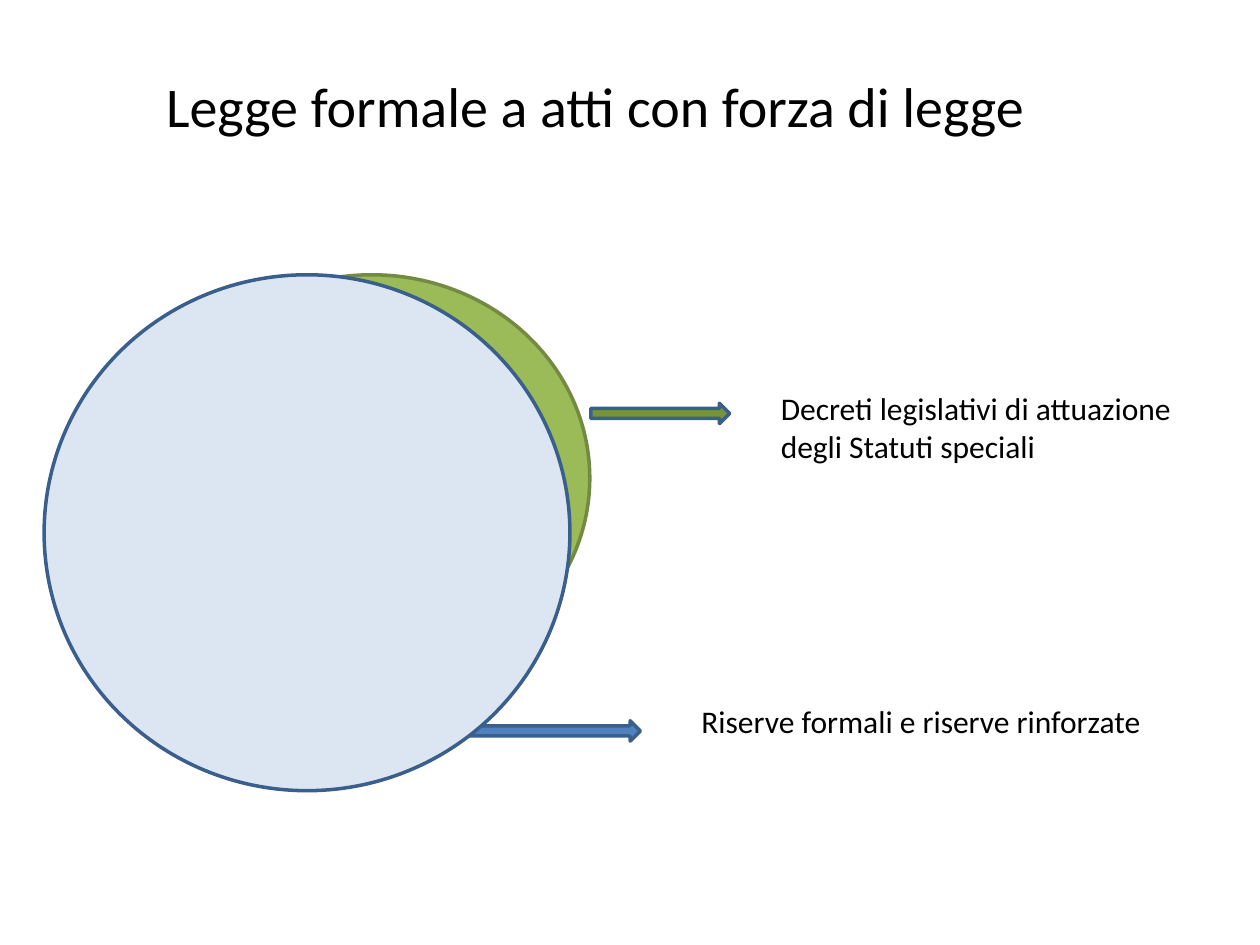
from pptx import Presentation
from pptx.dml.color import RGBColor
from pptx.enum import shapes, text
from pptx.util import Cm, Pt

COLOURS = {
    "text": "000000",
    "law": "DCE6F2",
    "decrees": "9BBB59",
    "decrees_line": "738A42",
    "decrees_arrow": "77933C",
    "reserves_arrow": "4F81BD",
    "line": "3A5F8C",
}
FONT = "Calibri"


def colour(name):
    """Return the named colour."""
    return RGBColor.from_string(COLOURS[name])


def add_text(page, box, words, size):
    """Write one wrapped paragraph in the box."""
    frame = page.shapes.add_textbox(*map(Cm, box)).text_frame
    frame.word_wrap = True
    frame.auto_size = text.MSO_AUTO_SIZE.SHAPE_TO_FIT_TEXT
    para = frame.paragraphs[0]
    para.text = words
    para.font.name = FONT
    para.font.size = Pt(size)
    para.font.color.rgb = colour("text")


def add_figure(page, kind, box, fill, line="line"):
    """Draw a filled and outlined preset shape in the box."""
    figure = page.shapes.add_shape(kind, *map(Cm, box))
    figure.shadow.inherit = False
    figure.fill.solid()
    figure.fill.fore_color.rgb = colour(fill)
    figure.line.color.rgb = colour(line)
    figure.line.width = Pt(2)


def add_diagram(page, box):
    """Place the overlapping circles, their arrows and labels in the box."""
    left, top, width, height = box
    oval = shapes.MSO_SHAPE.OVAL
    arrow = shapes.MSO_SHAPE.RIGHT_ARROW

    def inside(x, y, *size):
        """Shift a relative box to its place on the page."""
        return (left + x, top + y, *size)

    add_figure(page, oval, inside(2.21, 0, 8.79, 8.2), "decrees", "decrees_line")
    add_figure(page, arrow, inside(6.02, 8.99, 6, 0.41), "reserves_arrow")
    add_text(page, inside(13, 8.48, width - 13, 1.03),
             "Riserve formali e riserve rinforzate", 18)
    add_figure(page, oval, inside(0, 0, 10.6, height), "law")
    add_figure(page, arrow, inside(11.02, 2.59, 2.8, 0.41), "decrees_arrow")
    add_text(page, inside(14.6, 2.18, 8.8, 1.8),
             "Decreti legislativi di attuazione degli Statuti speciali", 18)


def main():
    """Build and save the deck."""
    deck = Presentation()
    deck.slide_width, deck.slide_height = Cm(25.4), Cm(19.05)
    page = deck.slides.add_slide(deck.slide_layouts[6])
    add_text(page, (3.1, 1.32, 21.8, 1.63),
             "Legge formale a atti con forza di legge", 32)
    add_diagram(page, (0.89, 5.54, 23, 10.4))
    deck.save("out.pptx")


if __name__ == "__main__":
    main()
